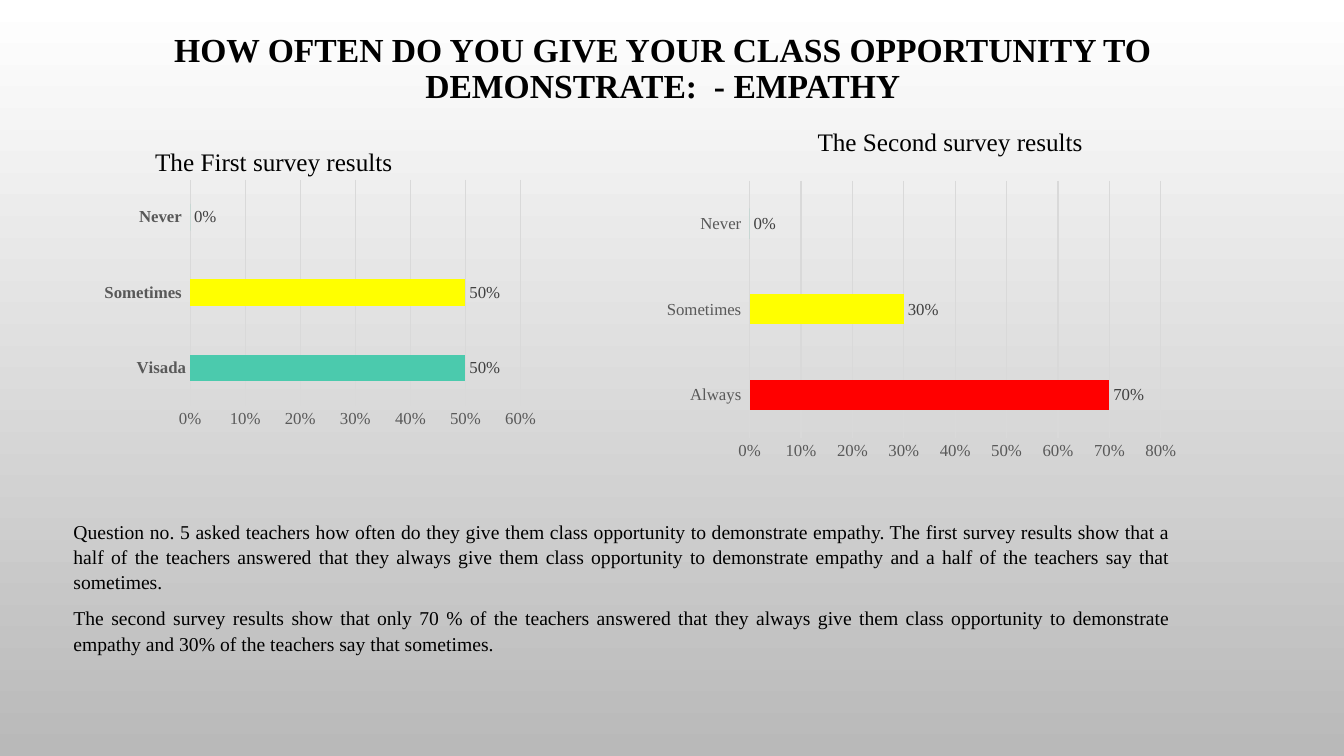
import pptx
import pptx.util
import pptx.chart.data
import pptx.dml.color
import pptx.enum.chart
import pptx.enum.text
from lxml import etree

Inches, Pt = pptx.util.Inches, pptx.util.Pt
Align = pptx.enum.text.PP_ALIGN
Tick = pptx.enum.chart.XL_TICK_MARK

# Content
FONT = "Times New Roman"
TITLE = "HOW OFTEN DO YOU GIVE YOUR CLASS OPPORTUNITY TO DEMONSTRATE:  - EMPATHY"
HEADS = [
    ("The First survey results", (1.44, 1.4, 3.12, 0.4)),
    ("The Second survey results", (8.01, 1.2, 3.12, 0.4)),
]
NOTES = [
    "Question no. 5 asked teachers how often do they give them class opportunity "
    "to demonstrate empathy. The first survey results show that a half of the "
    "teachers answered that they always give them class opportunity to "
    "demonstrate empathy and a half of the teachers say that sometimes.",
    "The second survey results show that only 70 % of the teachers answered that "
    "they always give them class opportunity to demonstrate empathy and 30% of "
    "the teachers say that sometimes.",
]
CHARTS = [
    dict(box=(0.91, 1.74, 4.69, 2.77), plot=(0.208, 0.015, 0.699, 0.81),
         cats=["Visada", "Sometimes ", "Never "], vals=[0.5, 0.5, 0],
         tints={1: "FFFF00"}, bold=True, top=0.6),
    dict(box=(6.46, 1.6, 5.27, 3), plot=(0.185, 0.065, 0.774, 0.85),
         cats=["Always ", "Sometimes ", "Never "], vals=[0.7, 0.3, 0],
         tints={0: "FF0000", 1: "FFFF00"}, bold=False, top=0.8),
]


def color(code):
    return pptx.dml.color.RGBColor.from_string(code)


def style(font, size, code="000000", bold=False):
    font.name, font.size, font.bold = FONT, Pt(size), bold
    font.color.rgb = color(code)


def place(box):
    return [Inches(n) for n in box]


def rule(line, code="D9D9D9"):
    line.color.rgb = color(code)
    line.width = Pt(0.75)


def add_text(slide, box, lines, size):
    frame = slide.shapes.add_textbox(*place(box)).text_frame
    frame.word_wrap = True
    frame.text = "\n".join(lines)
    for para in frame.paragraphs:
        style(para.font, size)
    return frame


def set_plot(chart, plot):
    """Fix the inner plot area as fractions of the chart."""
    area = chart._chartSpace.chart.plotArea
    ns = etree.QName(area).namespace
    for old in area.findall(f"{{{ns}}}layout"):
        area.remove(old)
    layout = etree.Element(f"{{{ns}}}layout")
    manual = etree.SubElement(layout, f"{{{ns}}}manualLayout")
    parts = [("layoutTarget", "inner"), ("xMode", "edge"), ("yMode", "edge")]
    parts += zip("xywh", plot)
    for tag, val in parts:
        etree.SubElement(manual, f"{{{ns}}}{tag}", val=str(val))
    area.insert(0, layout)


def add_bars(slide, box, plot, cats, vals, tints, bold, top):
    data = pptx.chart.data.CategoryChartData(number_format="0%")
    data.categories = cats
    data.add_series("Series 1", vals)
    kind = pptx.enum.chart.XL_CHART_TYPE.BAR_CLUSTERED
    chart = slide.shapes.add_chart(kind, *place(box), data).chart
    style(chart.font, 12)
    chart.has_legend = chart.has_title = False
    set_plot(chart, plot)

    # Axes
    names, scale = chart.category_axis, chart.value_axis
    for axis in (names, scale):
        axis.major_tick_mark = axis.minor_tick_mark = Tick.NONE
        style(axis.tick_labels.font, 12, "595959")
    names.tick_labels.font.bold = bold
    rule(names.format.line)
    scale.format.line.fill.background()
    scale.minimum_scale, scale.maximum_scale, scale.major_unit = 0, top, 0.1
    scale.has_major_gridlines = True
    rule(scale.major_gridlines.format.line)
    scale.tick_labels.number_format = "0%"
    scale.tick_labels.number_format_is_linked = False

    # Bars and their labels
    bars = chart.plots[0]
    bars.gap_width = 182
    bars.vary_by_categories = False
    series = bars.series[0]
    fills = [series.format.fill]
    fills += [series.points[i].format.fill for i in tints]
    for fill, code in zip(fills, ["4BCAAD", *tints.values()]):
        fill.solid()
        fill.fore_color.rgb = color(code)
    labels = series.data_labels
    labels.show_value = True
    labels.position = pptx.enum.chart.XL_LABEL_POSITION.OUTSIDE_END
    labels.number_format = "0%"
    labels.number_format_is_linked = False
    style(labels.font, 12, "404040")


def main():
    deck = pptx.Presentation()
    deck.slide_width, deck.slide_height = Inches(13.33), Inches(7.5)
    slide = deck.slides.add_slide(deck.slide_layouts[5])

    # Background
    back = slide.background.fill
    back.gradient()
    back.gradient_angle = 270
    for stop, code in zip(back.gradient_stops, ("FFFFFF", "B9B9B9")):
        stop.color.rgb = color(code)

    # Title
    title = slide.shapes.title
    title.left, title.top, title.width, title.height = place((0.91, 0.24, 11.33, 0.9))
    frame = title.text_frame
    frame.text = TITLE
    frame.auto_size = pptx.enum.text.MSO_AUTO_SIZE.NONE
    frame.vertical_anchor = pptx.enum.text.MSO_ANCHOR.MIDDLE
    para = frame.paragraphs[0]
    para.alignment, para.line_spacing = Align.CENTER, 0.9
    style(para.font, 24, bold=True)

    # Survey charts with headings
    for item in CHARTS:
        add_bars(slide, **item)
    for text, box in HEADS:
        add_text(slide, box, [text], 18)

    # Findings
    notes = add_text(slide, (0.63, 5.09, 11.08, 1.84), NOTES, 14)
    for para in notes.paragraphs:
        para.alignment, para.line_spacing = Align.JUSTIFY, 1.07
        para.space_after = Pt(8)

    deck.save("out.pptx")


if __name__ == "__main__":
    main()
